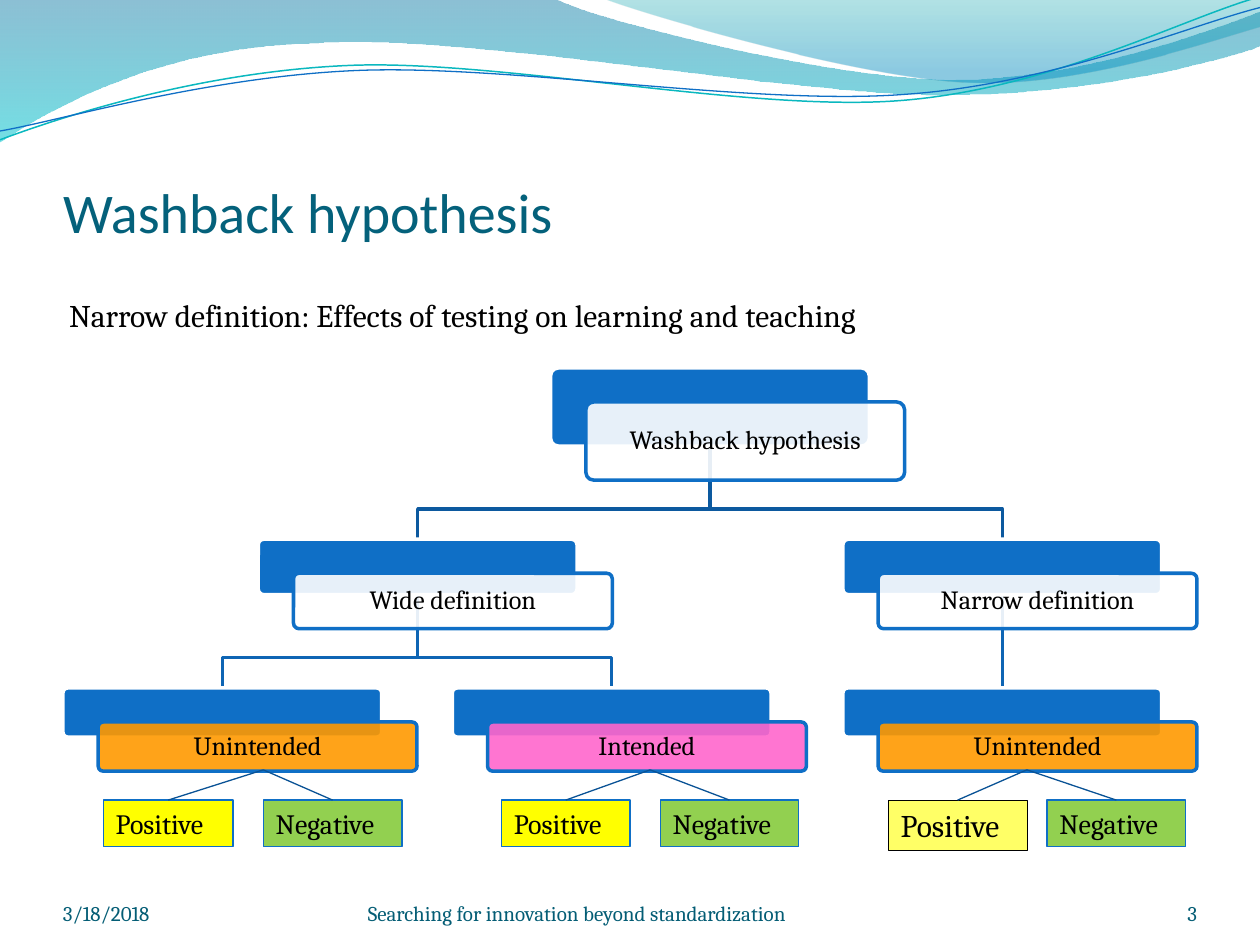
from dataclasses import dataclass
from typing import Optional

import pptx
import pptx.dml.color
import pptx.enum.shapes
import pptx.enum.text
import pptx.oxml
import pptx.oxml.ns
import pptx.util

Inches = pptx.util.Inches
Pt = pptx.util.Pt
RGBColor = pptx.dml.color.RGBColor
Align = pptx.enum.text.PP_ALIGN
Anchor = pptx.enum.text.MSO_ANCHOR
Preset = pptx.enum.shapes.MSO_SHAPE
qn = pptx.oxml.ns.qn
NAMESPACE = pptx.oxml.ns.nsdecls("a")

BLUE = RGBColor(0x0F, 0x6F, 0xC6)
WHITE = RGBColor(0xFF, 0xFF, 0xFF)
BLACK = RGBColor(0, 0, 0)
ORANGE = RGBColor(0xFF, 0x99, 0x00)
PINK = RGBColor(0xFF, 0x66, 0xCC)
YELLOW = RGBColor(0xFF, 0xFF, 0x00)
PALE_YELLOW = RGBColor(0xFF, 0xFF, 0x66)
GREEN = RGBColor(0x92, 0xD0, 0x50)
TITLE_TEAL = RGBColor(0x04, 0x61, 0x7B)
FOOTER_TEAL = RGBColor(0x04, 0x5D, 0x75)
TEAL_LINE = RGBColor(0x0A, 0xB8, 0xBF)
UPPER_LINK = RGBColor(0x0C, 0x59, 0x9F)
LOWER_LINK = RGBColor(0x0E, 0x65, 0xB4)
LEAF_LINK = RGBColor(0x09, 0x52, 0x95)

CARD_WIDTH, SHIFT_X, SHIFT_Y = 2.53, 0.28, 0.27
LEAF_TOP, FORK_TOP = 6.35, 6.11


@dataclass
class Card:
    text: str
    left: float
    top: float
    height: float
    color: RGBColor = WHITE
    parent: Optional["Card"] = None

    @property
    def middle(self) -> float:
        return self.left + CARD_WIDTH / 2

    @property
    def bottom(self) -> float:
        return self.top + self.height


@dataclass
class Leaf:
    text: str
    left: float
    width: float
    fork: float
    color: RGBColor
    height: float = 0.37
    size: int = 16
    line: RGBColor = BLUE
    line_width: float = 0.75


def set_alpha(color_element, percent: int) -> None:
    color_element.append(pptx.oxml.parse_xml(f'<a:alpha {NAMESPACE} val="{percent * 1000}"/>'))


def add_outline(page, start: tuple, steps: list, close: bool = False):
    """Each step holds 2 numbers for a line or 6 for a Bezier curve."""
    builder = page.shapes.build_freeform(*map(Inches, start), scale=1.0)
    points = [tuple(map(Inches, step[i:i + 2])) for step in steps for i in range(0, len(step), 2)]
    builder.add_line_segments(points, close=close)
    shape = builder.convert_to_shape()
    shape.shadow.inherit = False
    # Gather the three points of each curve into one segment
    segments = iter(list(shape.element.spPr.iter(qn("a:lnTo"))))
    for step in steps:
        first = next(segments)
        if len(step) == 6:
            curve = pptx.oxml.parse_xml(f"<a:cubicBezTo {NAMESPACE}/>")
            first.addprevious(curve)
            for segment in (first, next(segments), next(segments)):
                curve.append(segment[0])
                segment.getparent().remove(segment)
    return shape


def add_band(page, start: tuple, steps: list, stops: list) -> None:
    shape = add_outline(page, start, steps, close=True)
    shape.line.fill.background()
    shape.fill.gradient()
    shape.fill.gradient_angle = 270
    for stop, (position, color, _) in zip(shape.fill.gradient_stops, stops):
        stop.position = position
        stop.color.rgb = color
    colors = list(shape.element.spPr.iter(qn("a:srgbClr")))
    for element, (_, _, percent) in zip(colors, stops):
        set_alpha(element, percent)


def add_path(page, start: tuple, steps: list, color: RGBColor, width: float):
    shape = add_outline(page, start, steps)
    shape.fill.background()
    shape.line.color.rgb = color
    shape.line.width = Pt(width)
    return shape


def add_box(page, preset, place: tuple, fill: RGBColor, line: RGBColor, width: float):
    box = page.shapes.add_shape(preset, *map(Inches, place))
    box.shadow.inherit = False
    box.fill.solid()
    box.fill.fore_color.rgb = fill
    box.line.color.rgb = line
    box.line.width = Pt(width)
    return box


def write(box, text: str, size: int, color: RGBColor = BLACK, font: str = "Cambria",
          align=Align.LEFT, anchor=Anchor.TOP, insets: tuple = (0.1, 0.05, 0.1, 0.05)) -> None:
    frame = box.text_frame
    frame.text = text
    frame.word_wrap = True
    frame.vertical_anchor = anchor
    (frame.margin_left, frame.margin_top,
     frame.margin_right, frame.margin_bottom) = map(Inches, insets)
    para = frame.paragraphs[0]
    para.alignment = align
    for span in para.runs:
        span.font.name, span.font.size = font, Pt(size)
        span.font.color.rgb = color


def add_label(page, place: tuple, text: str, size: int, **style) -> None:
    write(page.shapes.add_textbox(*map(Inches, place)), text, size, **style)


def add_card(page, card: Card) -> None:
    place = (card.left, card.top, CARD_WIDTH, card.height)
    back = add_box(page, Preset.ROUNDED_RECTANGLE, place, BLUE, WHITE, 2)
    place = (card.left + SHIFT_X, card.top + SHIFT_Y, CARD_WIDTH, card.height)
    front = add_box(page, Preset.ROUNDED_RECTANGLE, place, card.color, BLUE, 2)
    back.adjustments[0] = front.adjustments[0] = 0.1
    set_alpha(front.element.spPr.find(qn("a:solidFill"))[0], 90)
    write(front, card.text, 15, align=Align.CENTER, anchor=Anchor.MIDDLE, insets=(0.06,) * 4)
    front.text_frame.paragraphs[0].line_spacing = 0.9


def add_link(page, card: Card) -> None:
    start, end = (card.parent.middle, card.parent.bottom), (card.middle, card.top)
    color = LOWER_LINK if card.parent.parent else UPPER_LINK
    if start[0] != end[0]:
        bend = start[1] + 0.5
        add_path(page, start, [(start[0], bend), (end[0], bend), end], color, 2)
        return
    # A straight drop runs down the middle of a narrow frame
    drop = add_path(page, start, [end], color, 2)
    drop.left, drop.width = drop.left - Inches(0.05), Inches(0.1)
    outline = next(drop.element.spPr.iter(qn("a:path")))
    outline.set("w", str(Inches(0.1)))
    for point in outline.iter(qn("a:pt")):
        point.set("x", str(Inches(0.05)))


def add_leaf(page, leaf: Leaf) -> None:
    place = (leaf.left, LEAF_TOP, leaf.width, leaf.height)
    box = add_box(page, Preset.RECTANGLE, place, leaf.color, leaf.line, leaf.line_width)
    write(box, leaf.text, leaf.size)
    ends = (leaf.fork, FORK_TOP, leaf.left + leaf.width / 2, LEAF_TOP)
    line = page.shapes.add_connector(pptx.enum.shapes.MSO_CONNECTOR.STRAIGHT, *map(Inches, ends))
    line.end_connect(box, 0)
    line.line.color.rgb = LEAF_LINK
    line.line.width = Pt(0.75)
    line.element.spPr.append(pptx.oxml.parse_xml(f"<a:effectLst {NAMESPACE}/>"))


def main() -> None:
    deck = pptx.Presentation()
    deck.slide_width, deck.slide_height = Inches(10), Inches(7.5)
    page = deck.slides.add_slide(deck.slide_layouts[5])

    # Waves along the top
    add_band(page, (0, 0), [
        (4.4, -0.01), (4.76, 0.17, 6.64, 0.63, 7.58, 0.63), (8.53, 0.63, 9.58, 0.26, 10, 0.09),
        (10.01, 0.36), (9.83, 0.44, 8.7, 0.76, 7.46, 0.75), (6.22, 0.75, 3.82, 0.28, 2.57, 0.34),
        (1.29, 0.36, 0.46, 0.83, -0.01, 1.13)],
        [(0, RGBColor(0x00, 0x74, 0xA1), 45), (1, RGBColor(0x00, 0xC6, 0xCF), 55)])
    add_band(page, (4.79, -0.01), [
        (5.09, 0.11, 6.82, 0.62, 7.69, 0.65), (8.56, 0.69, 9.61, 0.32, 10, 0.21), (10, 0)],
        [(0, RGBColor(0x00, 0xA1, 0xA9), 30), (0.8, RGBColor(0x00, 0x8B, 0xBF), 45)])
    add_path(page, (0, 1.11), [
        (0.48, 0.93, 1.58, 0.57, 2.77, 0.52), (3.95, 0.47, 5.93, 0.89, 7.13, 0.8),
        (8.33, 0.71, 9.38, 0.15, 9.98, -0.02)], TEAL_LINE, 0.85)
    add_path(page, (0, 1.04), [
        (0.47, 0.96, 1.64, 0.61, 2.83, 0.56), (4.03, 0.51, 5.97, 0.84, 7.17, 0.75),
        (8.36, 0.67, 9.41, 0.21, 10, 0.06)], BLUE, 0.75)

    # Title and definition
    title = page.shapes.title
    title.left, title.top, title.width, title.height = map(Inches, (0.5, 1.31, 9, 0.63))
    write(title, "Washback hypothesis", 32, TITLE_TEAL, "Calibri",
          anchor=Anchor.BOTTOM, insets=(0, 0.05, 0, 0))
    add_label(page, (0.45, 2.3, 6.99, 0.4),
              "Narrow definition: Effects of testing on learning and teaching", 18)

    # Hierarchy, with the links behind the cards
    root = Card("Washback hypothesis", 4.37, 2.92, 0.62)
    wide = Card("Wide definition", 2.05, 4.28, 0.44, parent=root)
    narrow = Card("Narrow definition", 6.69, 4.28, 0.44, parent=root)
    cards = [root, wide, narrow,
             Card("Unintended", 0.5, 5.46, 0.39, ORANGE, wide),
             Card("Intended", 3.59, 5.46, 0.39, PINK, wide),
             Card("Unintended", 6.69, 5.46, 0.39, ORANGE, narrow)]
    for card in cards[1:]:
        add_link(page, card)
    for card in cards:
        add_card(page, card)

    # Positive and negative leaves
    for leaf in (Leaf("Positive", 0.82, 1.03, 2.09, YELLOW),
                 Leaf("Negative", 2.09, 1.1, 2.09, GREEN),
                 Leaf("Positive", 3.98, 1.02, 5.16, YELLOW),
                 Leaf("Negative", 5.24, 1.1, 5.16, GREEN),
                 Leaf("Positive", 7.05, 1.1, 8.15, PALE_YELLOW, 0.4, 18, BLACK, 0.25),
                 Leaf("Negative", 8.31, 1.1, 8.15, GREEN)):
        add_leaf(page, leaf)

    # Footer
    for left, width, text, align in (
            (0.5, 2.33, "3/18/2018", Align.LEFT),
            (2.92, 3.67, "Searching for innovation beyond standardization", Align.LEFT),
            (8.67, 0.83, "3", Align.RIGHT)):
        add_label(page, (left, 6.95, width, 0.4), text, 12, color=FOOTER_TEAL,
                  align=align, anchor=Anchor.BOTTOM, insets=(0,) * 4)

    deck.save("out.pptx")


if __name__ == "__main__":
    main()
